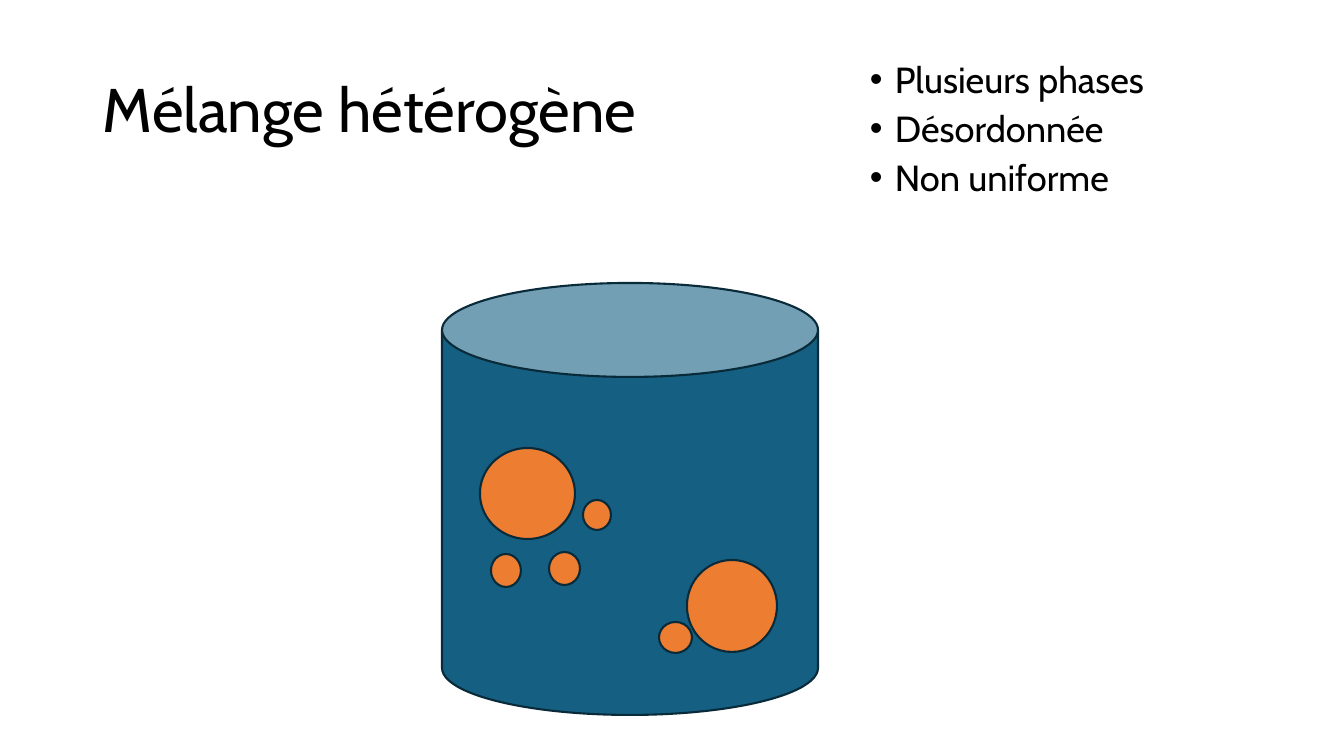
from lxml import etree
from pptx import Presentation
from pptx.dml.color import RGBColor
from pptx.enum.shapes import MSO_SHAPE as Shape
from pptx.enum.text import MSO_ANCHOR as Anchor, PP_ALIGN as Align
from pptx.oxml.ns import qn
from pptx.util import Emu, Pt

# Content
TITLE = "Mélange hétérogène"
PROPERTIES = ["Plusieurs phases", "Désordonnée", "Non uniforme"]

# Boxes in px: left, top, width, height
SLIDE_SIZE = (1344, 756)
TITLE_BOX = (93, 40, 1159, 146)
PROPERTIES_BOX = (860, 61, 392, 145)
BEAKER_BOX = (442, 283, 376, 432)
DROPLET_BOXES = [
    (480, 448, 95, 91),
    (583, 500, 28, 30),
    (549, 552, 31, 33),
    (491, 554, 30, 33),
    (687, 560, 90, 92),
    (659, 622, 33, 31),
]
BULLET_INDENT = 25

# Style
FONT = "Cabin"
BLACK = RGBColor(0x00, 0x00, 0x00)
LIQUID = RGBColor(0x15, 0x60, 0x82)
DROPLET = RGBColor(0xED, 0x7D, 0x31)
OUTLINE = RGBColor(0x09, 0x2A, 0x39)
PX_PER_INCH = 100.8


def px(length):
    return Emu(round(length * 914400 / PX_PER_INCH))


def add_text(slide, box, lines, size, spacing, anchor):
    frame = slide.shapes.add_textbox(*map(px, box)).text_frame
    frame.word_wrap = True
    frame.vertical_anchor = anchor
    for index, line in enumerate(lines):
        paragraph = frame.add_paragraph() if index else frame.paragraphs[0]
        paragraph.alignment = Align.LEFT
        paragraph.line_spacing = spacing
        run = paragraph.add_run()
        run.text = line
        run.font.name = FONT
        run.font.size = Pt(size)
        run.font.color.rgb = BLACK
    return frame


def add_bullet(paragraph):
    paragraph.space_before = Pt(10)
    properties = paragraph._p.get_or_add_pPr()
    properties.set("marL", str(px(BULLET_INDENT)))
    properties.set("indent", str(-px(BULLET_INDENT)))
    etree.SubElement(properties, qn("a:buFont")).set("typeface", "Arial")
    etree.SubElement(properties, qn("a:buChar")).set("char", "•")


def add_outlined(slide, kind, box, fill):
    shape = slide.shapes.add_shape(kind, *map(px, box))
    shape.shadow.inherit = False
    shape.fill.solid()
    shape.fill.fore_color.rgb = fill
    shape.line.color.rgb = OUTLINE
    shape.line.width = Pt(1.5)


def main():
    presentation = Presentation()
    presentation.slide_width, presentation.slide_height = map(px, SLIDE_SIZE)
    slide = presentation.slides.add_slide(presentation.slide_layouts[6])

    # Title and properties of the mixture
    add_text(slide, TITLE_BOX, [TITLE], 44, 0.9, Anchor.MIDDLE)
    properties = add_text(slide, PROPERTIES_BOX, PROPERTIES, 25.9, 0.8, Anchor.TOP)
    for paragraph in properties.paragraphs:
        add_bullet(paragraph)

    # Beaker with droplets
    add_outlined(slide, Shape.CAN, BEAKER_BOX, LIQUID)
    for box in DROPLET_BOXES:
        add_outlined(slide, Shape.FLOWCHART_CONNECTOR, box, DROPLET)

    presentation.save("out.pptx")


if __name__ == "__main__":
    main()
